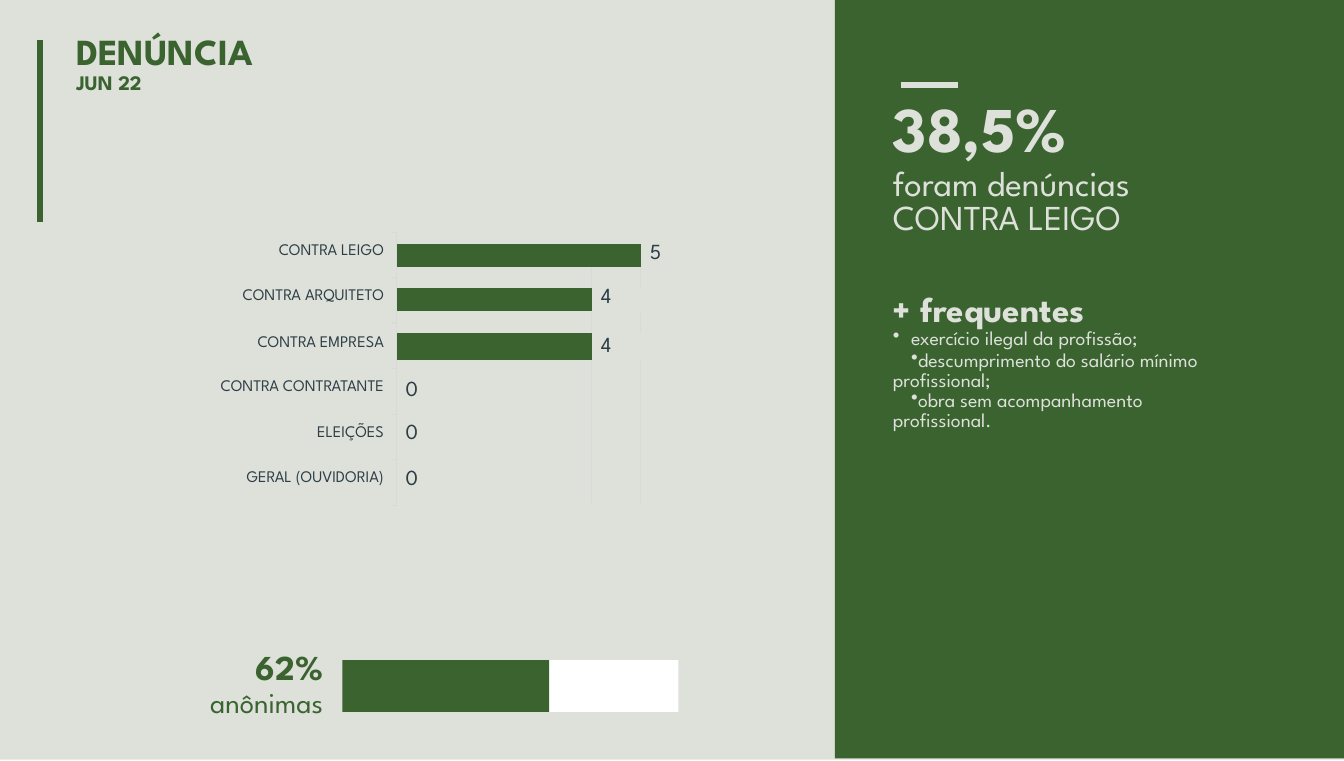
"""Builds the June 22 complaints slide with its bar table and highlights panel."""
from lxml.etree import SubElement
from pptx import Presentation
from pptx.dml.color import RGBColor
from pptx.enum.shapes import MSO_CONNECTOR, MSO_SHAPE
from pptx.enum.text import PP_ALIGN
from pptx.oxml import parse_xml
from pptx.oxml.ns import nsdecls, qn
from pptx.util import Inches, Pt

FONT = "League Spartan"
GREEN = RGBColor(0x3A, 0x63, 0x30)
SAGE = RGBColor(0xDD, 0xE1, 0xDA)
WHITE = RGBColor(0xFF, 0xFF, 0xFF)
SLATE = RGBColor(0x2E, 0x3D, 0x46)
GRID = RGBColor(0xD9, 0xD9, 0xD9)


def add_line(x1, y1, x2, y2, color, width):
    line = slide.shapes.add_connector(
        MSO_CONNECTOR.STRAIGHT, Inches(x1), Inches(y1), Inches(x2), Inches(y2))
    line.line.color.rgb = color
    line.line.width = Pt(width)
    SubElement(line._element.spPr, qn("a:effectLst"))


def write(paragraph, text, size, color, bold=False, align=PP_ALIGN.LEFT, spacing=None, before=0):
    paragraph.text = text
    paragraph.alignment = align
    paragraph.space_before = Pt(before)
    if spacing:
        paragraph.line_spacing = Pt(spacing)
    font = paragraph.runs[0].font
    font.name, font.size, font.bold = FONT, Pt(size), bold
    font.color.rgb = color


prs = Presentation()
prs.slide_width, prs.slide_height = Inches(10.4), Inches(5.89)
slide = prs.slides.add_slide(prs.slide_layouts[6])

for x, y, width, height, color in [
    (0, 0, 10.4, 5.88, SAGE),
    (4.25, 5.11, 1, 0.4, WHITE),
    (2.65, 5.11, 1.6, 0.4, GREEN),
    (6.46, 0, 3.94, 5.87, GREEN),
]:
    block = slide.shapes.add_shape(
        MSO_SHAPE.RECTANGLE, Inches(x), Inches(y), Inches(width), Inches(height))
    block.shadow.inherit = False
    block.fill.solid()
    block.fill.fore_color.rgb = color
    block.line.fill.background()

add_line(6.97, 0.66, 7.41, 0.66, SAGE, 3.6)
add_line(0.31, 0.31, 0.31, 1.72, GREEN, 3.6)

col_widths = [1.57, 1.51, 0.38, 0.19]
row_heights = [0.18, 0.16, 0.18, 0.17, 0.21, 0.42, 0.35, 0.35]
bars = slide.shapes.add_table(
    len(row_heights), len(col_widths), Inches(1.5), Inches(1.89),
    Inches(sum(col_widths)), Inches(sum(row_heights))).table
bars.first_row = bars.horz_banding = False
bars._tbl.tblPr.find(qn("a:tableStyleId")).text = "{2D5ABB26-0587-4C30-8999-92F81FD0307C}"
for column, width in zip(bars.columns, col_widths):
    column.width = Inches(width)
for row, height in zip(bars.rows, row_heights):
    row.height = Inches(height)
for cell in bars.iter_cells():
    cell.margin_left = cell.margin_right = cell.margin_top = cell.margin_bottom = 0
    cell.fill.background()

complaints = [
    (0, "CONTRA LEIGO", "5", 3, 0, 0),
    (2, "CONTRA ARQUITETO", "4", 2, 0.01, 0),
    (4, "CONTRA EMPRESA", "4", 2, 0.02, 0.03),
    (5, "CONTRA CONTRATANTE", "0", 1, 0.15, 0.16),
    (6, "ELEIÇÕES", "0", 1, 0.09, 0.08),
    (7, "GERAL (OUVIDORIA)", "0", 1, 0.09, 0.08),
]
for row, category, count, count_col, category_top, count_top in complaints:
    category_cell, count_cell = bars.cell(row, 0), bars.cell(row, count_col)
    category_cell.margin_right = Inches(0.1)
    category_cell.margin_top = Inches(category_top)
    write(category_cell.text_frame.paragraphs[0], category, 9, SLATE, align=PP_ALIGN.RIGHT)
    count_cell.margin_left = Inches(0.07)
    count_cell.margin_top = Inches(count_top)
    count_cell.text_frame.word_wrap = False
    write(count_cell.text_frame.paragraphs[0], count, 12, SLATE)
    for col in range(1, count_col):
        bars.cell(row, col).fill.solid()
        bars.cell(row, col).fill.fore_color.rgb = GREEN

for cell in bars.iter_cells():
    if not cell.text_frame.text:
        SubElement(cell.text_frame.paragraphs[0]._p, qn("a:endParaRPr"), sz="100")
for row in (1, 3, 5, 6, 7):
    for col, side in ((1, "lnR"), (2, "lnL")):
        bars.cell(row, col)._tc.get_or_add_tcPr().insert(0, parse_xml(
            f'<a:{side} {nsdecls("a")} w="9525"><a:solidFill>'
            f'<a:srgbClr val="{GRID}"/></a:solidFill></a:{side}>'))

add_line(3.07, 1.8, 3.07, 3.91, GRID, 0.6)
for tick in range(7):
    tick_y = round(1.8 + tick * 2.11 / 6, 2)
    add_line(3.03, tick_y, 3.07, tick_y, GRID, 0.6)

left, right = PP_ALIGN.LEFT, PP_ALIGN.RIGHT
text_blocks = [
    ((0.59, 0.22, 5.78, 0.75), [
        ("DENÚNCIA", 20.5, GREEN, True, left, 23.1),
        ("JUN 22", 11.5, GREEN, True, left, 12.3),
    ]),
    ((1.39, 5, 1.11, 0.58), [
        ("62%", 19.5, GREEN, True, right, 21.9),
        ("anônimas", 16, GREEN, False, right, 17.7),
    ]),
    ((6.91, 0.7, 2.46, 2.66), [
        ("38,5%", 35.5, SAGE, True, left, 40.5),
        ("foram denúncias CONTRA LEIGO", 19.5, SAGE, False, left, 19.1, 2.1),
        ("+ frequentes", 19.5, SAGE, True, left, 22.8, 28),
        ("exercício ilegal da profissão;", 11, SAGE, False, left, 11.5),
        ("descumprimento do salário mínimo profissional;", 11, SAGE, False, left, 11.2, 0.9),
        ("obra sem acompanhamento profissional.", 11, SAGE, False, left, 11, 0.1),
    ]),
]
for box, lines in text_blocks:
    frame = slide.shapes.add_textbox(*map(Inches, box)).text_frame
    frame.word_wrap = True
    frame.margin_left = frame.margin_right = frame.margin_bottom = 0
    frame.margin_top = Inches(0.02)
    for number, line in enumerate(lines):
        write(frame.add_paragraph() if number else frame.paragraphs[0], *line)

for reason, (margin, indent) in zip(frame.paragraphs[3:], [(0.14, -0.14), (0, 0.14), (0, 0.14)]):
    properties = reason._p.get_or_add_pPr()
    properties.set("marL", str(Inches(margin)))
    properties.set("indent", str(Inches(indent)))
    SubElement(properties, qn("a:buChar"), char="•")

prs.save("out.pptx")
